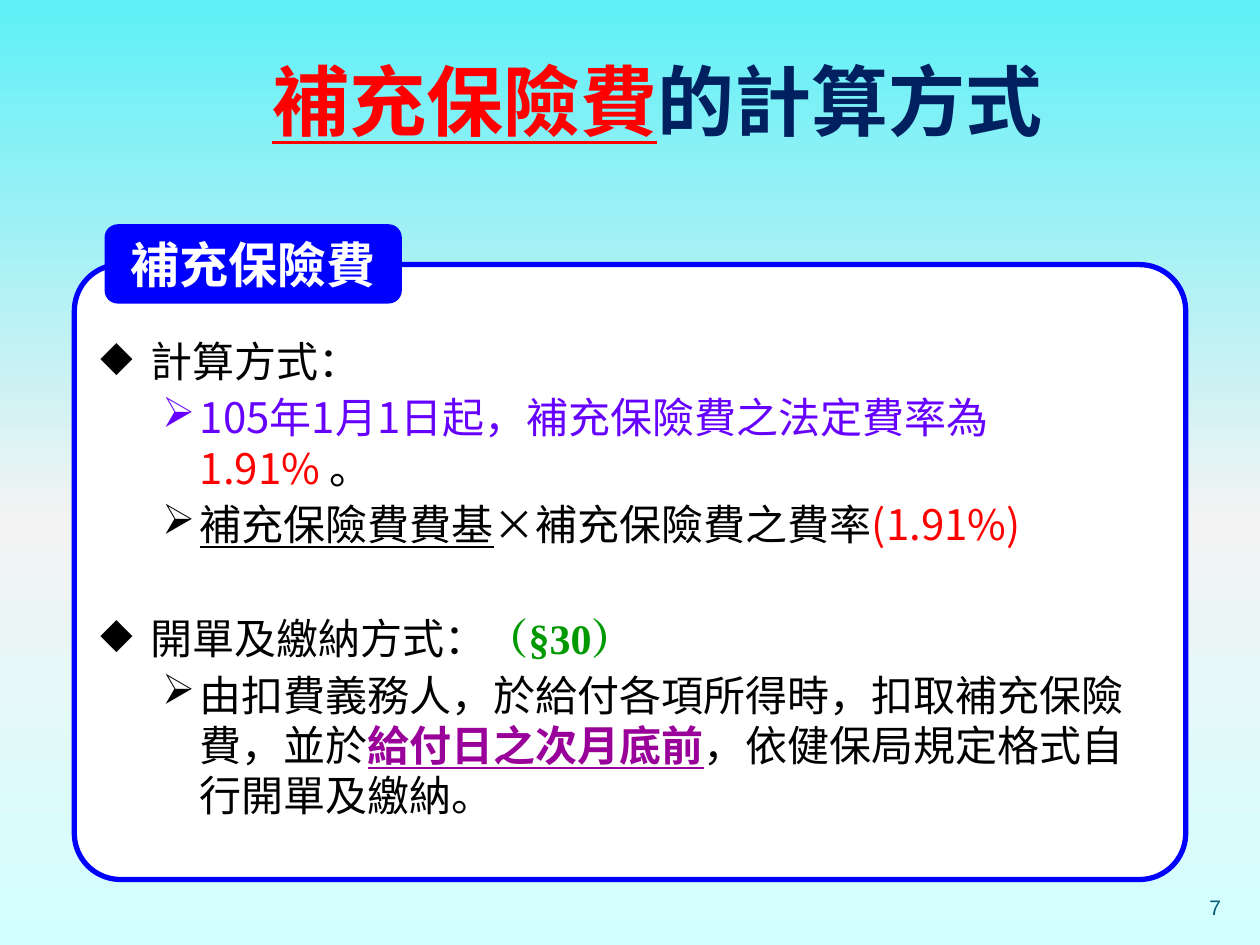
from dataclasses import dataclass

from lxml import etree
from pptx import Presentation
from pptx.dml.color import RGBColor
from pptx.enum.shapes import MSO_SHAPE
from pptx.enum.text import MSO_ANCHOR, PP_ALIGN
from pptx.oxml.ns import qn
from pptx.util import Inches, Pt

ROUND = MSO_SHAPE.ROUNDED_RECTANGLE
MIDDLE, BOTTOM = MSO_ANCHOR.MIDDLE, MSO_ANCHOR.BOTTOM
LEFT, CENTER, RIGHT = PP_ALIGN.LEFT, PP_ALIGN.CENTER, PP_ALIGN.RIGHT


@dataclass(frozen=True)
class Theme:
    sans: str = "Noto Sans CJK SC"
    serif: str = "Times New Roman"
    plain: str = "Arial"
    sky: tuple = ((0, "5EF0F7"), (55, "F3F3F3"), (100, "D2FFFF"))
    white: str = "FFFFFF"
    black: str = "000000"
    blue: str = "0000FF"
    navy: str = "002060"
    red: str = "FF0000"
    violet: str = "6600FF"
    green: str = "009900"
    purple: str = "990099"
    teal: str = "045D75"
    title: int = 44
    label: int = 28
    body: int = 24
    small: int = 12
    gap: float = 3.6
    section: float = 36


@dataclass
class Run:
    text: str
    color: str
    bold: bool = False
    under: bool = False
    font: str = Theme.sans


class Deck:
    def __init__(self, theme):
        self.theme = theme
        self.file = Presentation()
        self.file.slide_width, self.file.slide_height = Inches(10), Inches(7.5)
        self.slide = self.file.slides.add_slide(self.file.slide_layouts[6])

    def sky(self):
        """Fill the background with a top-to-bottom gradient."""
        self.slide.background.fill.gradient()
        grad = self.slide.element.find(".//" + qn("a:gradFill"))
        for child in list(grad):
            grad.remove(child)
        stops = etree.SubElement(grad, qn("a:gsLst"))
        for place, color in self.theme.sky:
            stop = etree.SubElement(stops, qn("a:gs"), pos=str(place * 1000))
            etree.SubElement(stop, qn("a:srgbClr"), val=color)
        etree.SubElement(grad, qn("a:lin"), ang="5400000", scaled="0")

    def panel(self, box, curve, fill, line=None):
        shape = self.slide.shapes.add_shape(ROUND, *map(Inches, box))
        shape.shadow.inherit = False
        shape.adjustments[0] = curve
        shape.fill.solid()
        shape.fill.fore_color.rgb = RGBColor.from_string(fill)
        if line:
            shape.line.color.rgb = RGBColor.from_string(line)
            shape.line.width = Pt(3)
        else:
            shape.line.fill.background()
        return shape.text_frame

    def text(self, box):
        return self.slide.shapes.add_textbox(*map(Inches, box)).text_frame

    def frame(self, frame, insets, anchor=MIDDLE, wrap=True):
        frame.word_wrap = wrap
        frame.vertical_anchor = anchor
        (frame.margin_left, frame.margin_top,
         frame.margin_right, frame.margin_bottom) = map(Inches, insets)

    def words(self, para, runs, size, align=LEFT):
        para.alignment = align
        for item in runs:
            run = para.add_run()
            run.text = item.text
            font = run.font
            font.size, font.name = Pt(size), item.font
            font.bold, font.underline = item.bold, item.under
            font.color.rgb = RGBColor.from_string(item.color)
            props = run._r.get_or_add_rPr()
            etree.SubElement(props, qn("a:ea"), typeface=item.font)

    def bullet(self, para, level):
        mark, left, hang = (("◆", 0.4, 0.4), ("➢", 0.79, 0.3))[level]
        para.level = level
        props = para._p.get_or_add_pPr()
        props.set("marL", str(Inches(left)))
        props.set("indent", str(-Inches(hang)))
        etree.SubElement(props, qn("a:buChar"), char=mark)

    def items(self, frame, rows):
        """Add bulleted rows, with a wider gap above each new section."""
        for index, (level, runs) in enumerate(rows):
            para = frame.add_paragraph() if index else frame.paragraphs[0]
            self.bullet(para, level)
            if index:
                gap = self.theme.gap if level else self.theme.section
                para.space_before = Pt(gap)
            self.words(para, runs, self.theme.body)


def main():
    look = Theme()
    deck = Deck(look)
    deck.sky()

    rows = [
        (0, [Run("計算方式：", look.black)]),
        (1, [Run("105年1月1日起，補充保險費之法定費率為", look.violet),
             Run("1.91%", look.red), Run(" 。", look.black)]),
        (1, [Run("補充保險費費基", look.black, under=True),
             Run("×補充保險費之費率", look.black), Run("(1.91%)", look.red)]),
        (0, [Run("開單及繳納方式：", look.black),
             Run("（§30）", look.green, bold=True, font=look.serif)]),
        (1, [Run("由扣費義務人，於給付各項所得時，扣取補充保險費，並於", look.black),
             Run("給付日之次月底前", look.purple, bold=True, under=True),
             Run("，依健保局規定格式自行開單及繳納。", look.black)]),
    ]
    body = deck.panel((0.59, 2.1, 8.82, 4.88), 0.075, look.white, look.blue)
    deck.frame(body, (0.1, 0.1, 0.1, 0.01))
    deck.items(body, rows)

    label = deck.panel((0.83, 1.78, 2.36, 0.63), 0.167, look.blue)
    deck.frame(label, (0.1, 0.05, 0.1, 0.05), wrap=False)
    deck.words(label.paragraphs[0], [Run("補充保險費", look.white, bold=True)],
               look.label, CENTER)

    title = deck.text((1.06, 0.36, 8.47, 0.87))
    deck.frame(title, (0.1, 0.05, 0.25, 0.05))
    deck.words(title.paragraphs[0],
               [Run("補充保險費", look.red, bold=True, under=True),
                Run("的計算方式", look.navy, bold=True)], look.title, CENTER)

    number = deck.text((8.86, 6.9, 0.83, 0.4))
    deck.frame(number, (0, 0, 0, 0), BOTTOM)
    deck.words(number.paragraphs[0], [Run("7", look.teal, font=look.plain)],
               look.small, RIGHT)

    deck.file.save("out.pptx")


if __name__ == "__main__":
    main()
